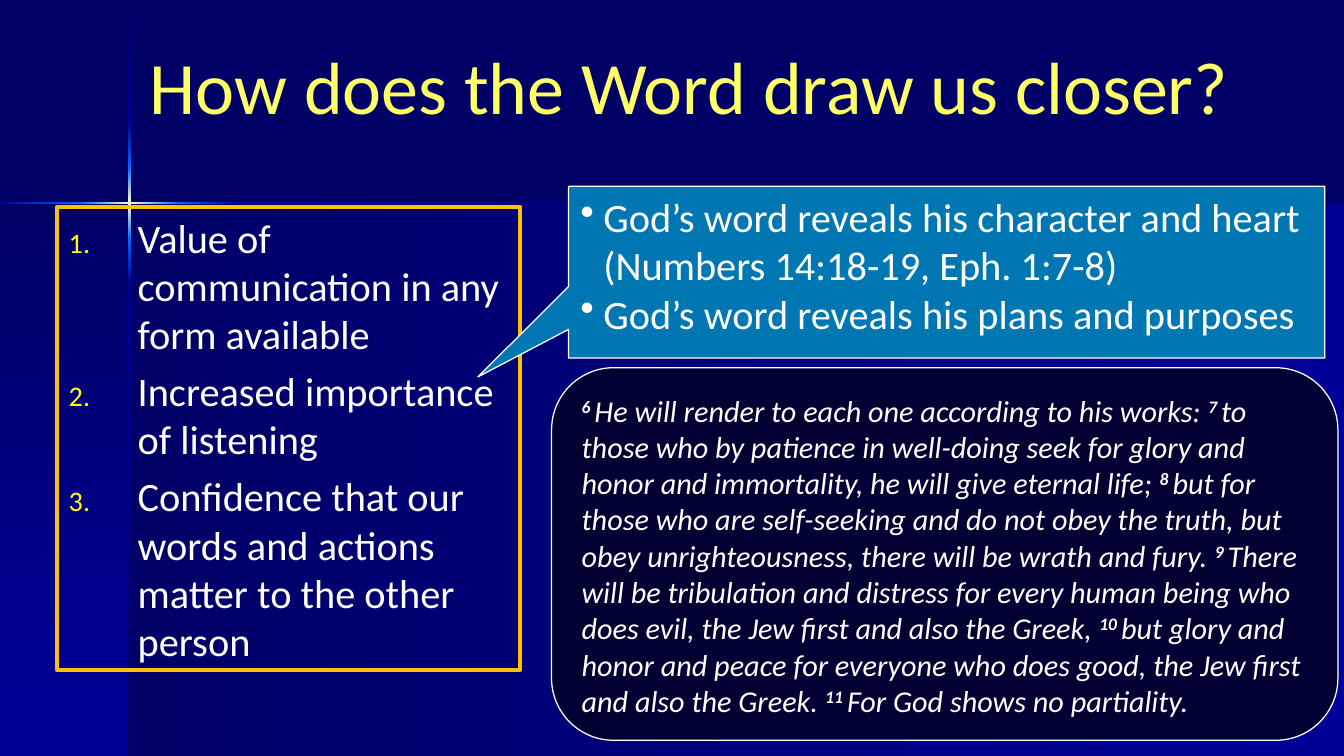
from dataclasses import dataclass

from lxml.etree import SubElement
from pptx import Presentation
from pptx.dml.color import RGBColor
from pptx.enum.shapes import MSO_SHAPE
from pptx.enum.text import MSO_ANCHOR
from pptx.oxml.ns import qn
from pptx.util import Inches, Pt

WIDTH, HEIGHT = 11.11, 6.25
FONT = "Calibri"
NAVY, BLUE, BRIGHT, GLOW = "000066", "000099", "0066FF", "FFFFCC"
WHITE, YELLOW, GOLD = "FFFFFF", "FFFF66", "FFC000"
CROSS_X, CROSS_Y, BEAM = 1.06, 1.67, 0.02


@dataclass
class Band:
    left: float
    top: float
    width: float
    height: float
    colors: tuple[str, ...]
    vertical: bool = False


@dataclass
class Beam:
    start: float
    end: float
    colors: tuple[str, ...]


@dataclass
class Verse:
    number: int
    text: str


PANELS = [
    Band(1.08, 1.68, 10.03, 4.57, (NAVY, BLUE)),
    Band(0, 1.68, 1.08, 4.57, (NAVY, BLUE), True),
]
VERTICAL_BEAMS = [
    Beam(0.01, 1.01, (NAVY, BLUE)),
    Beam(1.01, 1.38, (BLUE, BRIGHT)),
    Beam(1.38, 1.98, (BRIGHT, GLOW, BRIGHT)),
    Beam(1.98, 2.35, (BRIGHT, BLUE)),
    Beam(2.35, HEIGHT, (BLUE, NAVY)),
]
HORIZONTAL_BEAMS = [
    Beam(0, 0.67, (BLUE, BRIGHT)),
    Beam(0.67, 1.48, (BRIGHT, GLOW, BRIGHT)),
    Beam(1.48, 1.97, (BRIGHT, BLUE)),
    Beam(1.97, WIDTH, (BLUE, NAVY)),
]
POINTS = [
    "Value of communication in any form available",
    "Increased importance of listening",
    "Confidence that our words and actions matter to the other person",
]
REVELATIONS = [
    "God’s word reveals his character and heart (Numbers 14:18-19, Eph. 1:7-8)",
    "God’s word reveals his plans and purposes",
]
VERSES = [
    Verse(6, "He will render to each one according to his works: "),
    Verse(7, "to those who by patience in well-doing seek for glory and honor "
             "and immortality, he will give eternal life; "),
    Verse(8, "but for those who are self-seeking and do not obey the truth, "
             "but obey unrighteousness, there will be wrath and fury. "),
    Verse(9, "There will be tribulation and distress for every human being who "
             "does evil, the Jew first and also the Greek, "),
    Verse(10, "but glory and honor and peace for everyone who does good, "
              "the Jew first and also the Greek. "),
    Verse(11, "For God shows no partiality."),
]


def rgb(color: str) -> RGBColor:
    return RGBColor.from_string(color)


def add_box(page, kind, left: float, top: float, width: float, height: float,
            fill: str | None = None, line: str | None = None, weight: float = 0.75):
    box = page.shapes.add_shape(kind, Inches(left), Inches(top), Inches(width), Inches(height))
    box.shadow.inherit = False
    if fill:
        box.fill.solid()
        box.fill.fore_color.rgb = rgb(fill)
    else:
        box.fill.background()
    if line:
        box.line.color.rgb = rgb(line)
        box.line.width = Pt(weight)
    else:
        box.line.fill.background()
    box.text_frame.word_wrap = True
    box.text_frame.vertical_anchor = MSO_ANCHOR.TOP
    return box


def add_band(page, band: Band) -> None:
    box = add_box(page, MSO_SHAPE.RECTANGLE, band.left, band.top, band.width, band.height)
    box.fill.gradient()
    box.fill.gradient_angle = 270 if band.vertical else 0
    stops = box.element.spPr.find(qn("a:gradFill")).find(qn("a:gsLst"))
    for stop in list(stops):
        stops.remove(stop)
    for index, color in enumerate(band.colors):
        position = 100000 * index // (len(band.colors) - 1)
        stop = SubElement(stops, qn("a:gs"), pos=str(position))
        SubElement(stop, qn("a:srgbClr"), val=color)


def style_span(span, size: float, color: str = WHITE) -> None:
    span.font.name = FONT
    span.font.size = Pt(size)
    span.font.color.rgb = rgb(color)


def add_list(box, items: list[str], indent: float, gap: float, numbered: bool) -> None:
    frame = box.text_frame
    frame.text = "\n".join(items)
    for index, para in enumerate(frame.paragraphs):
        props = para._p.get_or_add_pPr()
        props.set("marL", str(Inches(indent)))
        props.set("indent", str(-Inches(indent)))
        props.set("algn", "l")
        if numbered:
            SubElement(SubElement(props, qn("a:buClr")), qn("a:srgbClr"), val="FFFF00")
            SubElement(props, qn("a:buSzPct"), val="70000")
            SubElement(props, qn("a:buAutoNum"), type="arabicPeriod")
        else:
            SubElement(props, qn("a:buChar"), char="•")
        if index and gap:
            para.space_before = Pt(gap)
        for span in para.runs:
            style_span(span, 24)


def add_verses(box, verses: list[Verse]) -> None:
    para = box.text_frame.paragraphs[0]
    para._p.get_or_add_pPr().set("algn", "l")
    for verse in verses:
        for text, is_number in ((f"{verse.number} ", True), (verse.text, False)):
            span = para.add_run()
            span.text = text
            style_span(span, 18)
            span.font.italic = True
            span.font.bold = is_number
            if is_number:
                span.font._element.set("baseline", "30000")


def main() -> None:
    deck = Presentation()
    deck.slide_width, deck.slide_height = Inches(WIDTH), Inches(HEIGHT)
    page = deck.slides.add_slide(deck.slide_layouts[6])

    # Background with a glowing cross of light
    page.background.fill.solid()
    page.background.fill.fore_color.rgb = rgb(NAVY)
    upright = [Band(CROSS_X, beam.start, BEAM, beam.end - beam.start, beam.colors, True)
               for beam in VERTICAL_BEAMS]
    level = [Band(beam.start, CROSS_Y, beam.end - beam.start, BEAM, beam.colors)
             for beam in HORIZONTAL_BEAMS]
    for band in PANELS + upright + level:
        add_band(page, band)

    # Title
    title = page.shapes.add_textbox(Inches(1.14), Inches(0.29), Inches(9.83), Inches(0.83))
    title.text_frame.word_wrap = True
    title.text_frame.vertical_anchor = MSO_ANCHOR.MIDDLE
    title.text_frame.text = "How does the Word draw us closer?"
    style_span(title.text_frame.paragraphs[0].runs[0], 44, YELLOW)

    # Numbered points
    points = add_box(page, MSO_SHAPE.RECTANGLE, 0.47, 1.71, 3.83, 3.83, line=GOLD, weight=2.25)
    add_list(points, POINTS, indent=0.57, gap=5, numbered=True)

    # Callout on the second point
    callout = add_box(page, MSO_SHAPE.RECTANGULAR_CALLOUT, 4.7, 1.54, 6.25, 1.42, "0077B2", WHITE)
    callout.adjustments[0], callout.adjustments[1] = -0.62, 0.61
    add_list(callout, REVELATIONS, indent=0.19, gap=0, numbered=False)

    # Scripture passage
    passage = add_box(page, MSO_SHAPE.ROUNDED_RECTANGLE, 4.56, 3.04, 6.5, 3.08, "000033", WHITE)
    add_verses(passage, VERSES)

    deck.save("out.pptx")


if __name__ == "__main__":
    main()
